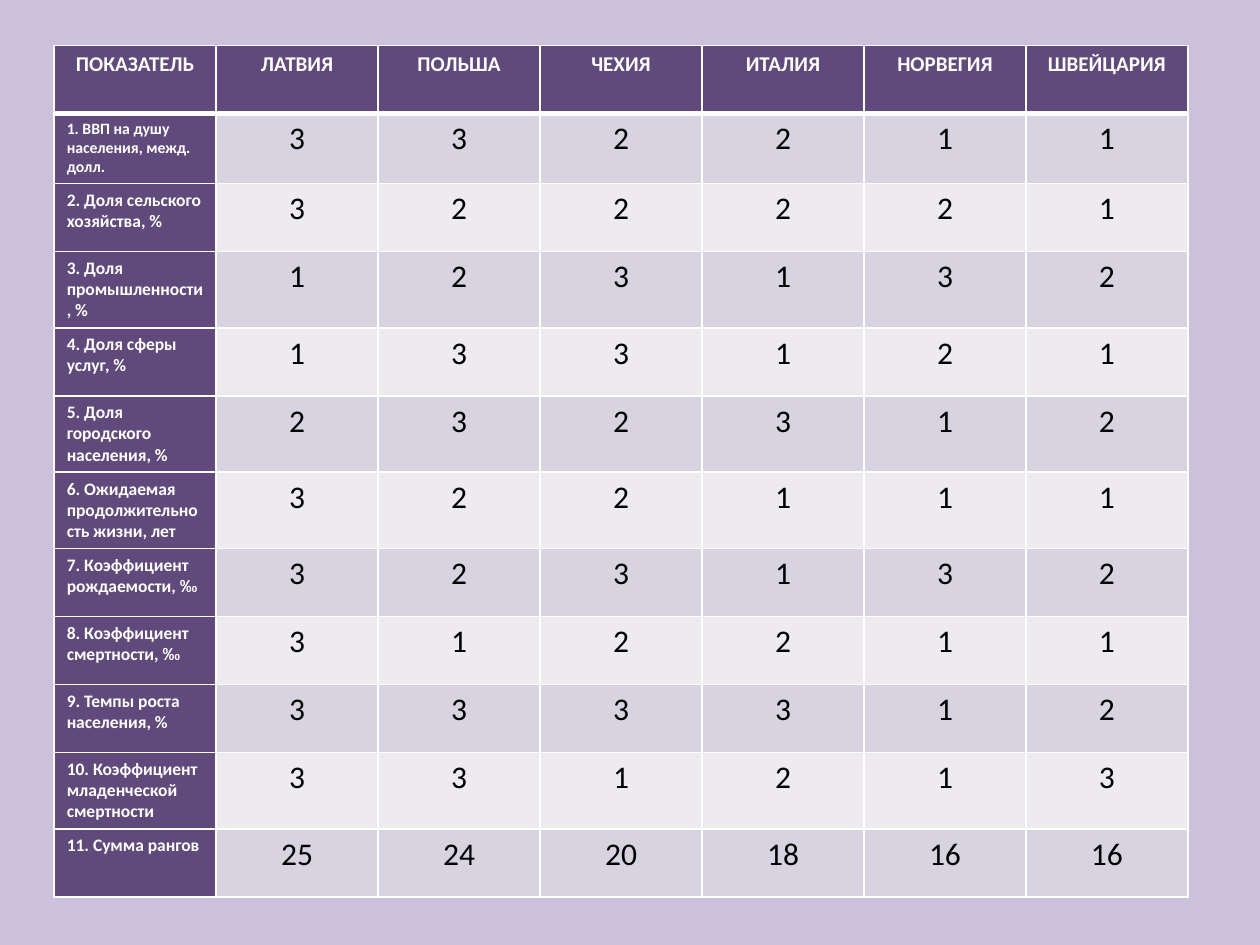
"""Build a slide with a table of country ranks by indicator."""
from dataclasses import dataclass

from lxml.etree import SubElement
from pptx import Presentation
from pptx.dml.color import RGBColor
from pptx.enum.text import PP_ALIGN as Align
from pptx.oxml.ns import qn
from pptx.util import Inches, Pt

BACKGROUND = "CCC1DA"
HEADING_FILL = "604A7B"
BAND_FILLS = ("D8D3E0", "EDEAF0")
WHITE = "FFFFFF"
BLACK = "000000"
FONT = "Calibri"
PER_MILLE = "‰"


@dataclass
class Indicator:
    label: str
    ranks: tuple
    size: int = 10


COUNTRIES = ("ЛАТВИЯ", "ПОЛЬША", "ЧЕХИЯ", "ИТАЛИЯ", "НОРВЕГИЯ", "ШВЕЙЦАРИЯ")
INDICATORS = (
    Indicator("1. ВВП на душу населения, межд. долл.", (3, 3, 2, 2, 1, 1), size=9),
    Indicator("2. Доля сельского хозяйства, %", (3, 2, 2, 2, 2, 1)),
    Indicator("3. Доля промышленности, %", (1, 2, 3, 1, 3, 2)),
    Indicator("4. Доля сферы услуг, %", (1, 3, 3, 1, 2, 1)),
    Indicator("5. Доля городского населения, %", (2, 3, 2, 3, 1, 2)),
    Indicator("6. Ожидаемая продолжительность жизни, лет", (3, 2, 2, 1, 1, 1)),
    Indicator("7. Коэффициент рождаемости, ‰", (3, 2, 3, 1, 3, 2)),
    Indicator("8. Коэффициент смертности, ‰", (3, 1, 2, 2, 1, 1)),
    Indicator("9. Темпы роста населения, %", (3, 3, 3, 3, 1, 2)),
    Indicator("10. Коэффициент младенческой смертности", (3, 3, 1, 2, 1, 3)),
    Indicator("11. Сумма рангов", (25, 24, 20, 18, 16, 16)),
)


def set_fill(fill, color: str) -> None:
    fill.solid()
    fill.fore_color.rgb = RGBColor.from_string(color)


def add_text(paragraph, text: str, *, size: int, color: str = WHITE,
             bold: bool = True, font: str = FONT, align=Align.CENTER) -> None:
    paragraph.alignment = align
    run = paragraph.add_run()
    run.text = text
    run.font.size = Pt(size)
    run.font.name = font
    run.font.bold = bold
    run.font.color.rgb = RGBColor.from_string(color)


def set_borders(cell, *, top: int = 1, bottom: int = 1) -> None:
    properties = cell._tc.get_or_add_tcPr()
    for side, width in (("L", 1), ("R", 1), ("T", top), ("B", bottom)):
        line = SubElement(properties, qn(f"a:ln{side}"), w=str(Pt(width)))
        solid = SubElement(line, qn("a:solidFill"))
        SubElement(solid, qn("a:srgbClr"), val=WHITE)


def format_cell(cell, row: int, fill: str):
    set_borders(cell, top=3 if row == 1 else 1, bottom=3 if row == 0 else 1)
    set_fill(cell.fill, fill)
    return cell.text_frame.paragraphs[0]


def fill_header(table) -> None:
    for column, heading in enumerate(("ПОКАЗАТЕЛЬ", *COUNTRIES)):
        add_text(format_cell(table.cell(0, column), 0, HEADING_FILL), heading, size=12)


def fill_row(table, row: int, indicator: Indicator) -> None:
    paragraph = format_cell(table.cell(row, 0), row, HEADING_FILL)
    label, sign, _ = indicator.label.partition(PER_MILLE)
    add_text(paragraph, label, size=indicator.size, align=Align.LEFT)
    if sign:
        add_text(paragraph, sign, size=indicator.size, font="Arial", align=Align.LEFT)
    band = BAND_FILLS[(row - 1) % 2]
    for column, rank in enumerate(indicator.ranks, start=1):
        add_text(format_cell(table.cell(row, column), row, band), str(rank),
                 size=18, color=BLACK, bold=False)


def main() -> None:
    presentation = Presentation()
    presentation.slide_width, presentation.slide_height = Inches(10), Inches(7.5)
    slide = presentation.slides.add_slide(presentation.slide_layouts[6])
    set_fill(slide.background.fill, BACKGROUND)

    row_count, column_count = len(INDICATORS) + 1, len(COUNTRIES) + 1
    table = slide.shapes.add_table(
        row_count, column_count, Inches(0.43), Inches(0.36),
        Inches(9), Inches(0.54 * row_count)).table
    fill_header(table)
    for row, indicator in enumerate(INDICATORS, start=1):
        fill_row(table, row, indicator)
    presentation.save("out.pptx")


if __name__ == "__main__":
    main()
